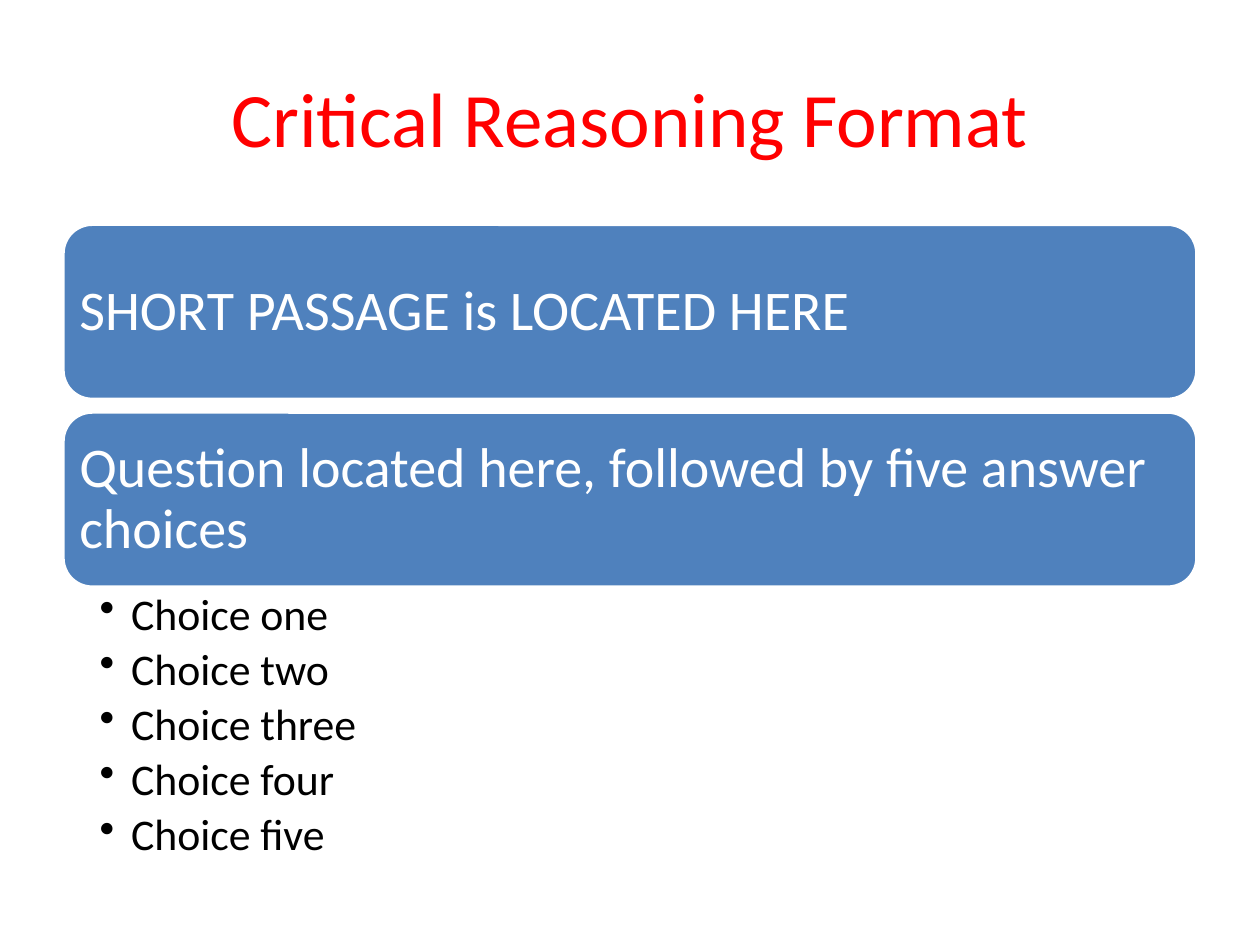
from dataclasses import dataclass

from lxml.etree import SubElement
from pptx import Presentation
from pptx.dml.color import RGBColor
from pptx.enum.shapes import MSO_SHAPE as Shape
from pptx.enum.text import MSO_ANCHOR as Anchor, PP_ALIGN as Align
from pptx.oxml.ns import qn
from pptx.util import Inches, Pt


@dataclass(frozen=True)
class Theme:
    font: str = "Calibri"
    red: RGBColor = RGBColor(0xFF, 0x00, 0x00)
    blue: RGBColor = RGBColor(0x4F, 0x81, 0xBD)
    white: RGBColor = RGBColor(0xFF, 0xFF, 0xFF)
    black: RGBColor = RGBColor(0x00, 0x00, 0x00)
    title_size: Pt = Pt(44)
    panel_size: Pt = Pt(32)
    choice_size: Pt = Pt(25)


theme = Theme()
LEFT, WIDTH = Inches(0.5), Inches(9)
PANEL_TOP, PANEL_HEIGHT, PANEL_STEP = Inches(1.78), Inches(1.39), Inches(1.49)
PANELS = [
    "SHORT PASSAGE is LOCATED HERE",
    "Question located here, followed by five answer choices",
]
CHOICES = ["Choice one", "Choice two", "Choice three", "Choice four", "Choice five"]

deck = Presentation()
deck.slide_width, deck.slide_height = Inches(10), Inches(7.5)
page = deck.slides.add_slide(deck.slide_layouts[6])


def add_text(top, height, lines, size, color, insets, anchor=Anchor.MIDDLE):
    """Add a full-width text box, one paragraph a line; insets are left, top, right, bottom."""
    box = page.shapes.add_textbox(LEFT, top, WIDTH, height)
    frame = box.text_frame
    frame.word_wrap = True
    frame.vertical_anchor = anchor
    frame.margin_left, frame.margin_top, frame.margin_right, frame.margin_bottom = map(Inches, insets)
    frame.text = "\n".join(lines)
    for paragraph in frame.paragraphs:
        paragraph.line_spacing = 0.9
        paragraph.font.name = theme.font
        paragraph.font.size = size
        paragraph.font.color.rgb = color
    return frame.paragraphs


# Title
[title] = add_text(Inches(0.3), Inches(1.25), ["Critical Reasoning Format"],
                   theme.title_size, theme.red, (0.1, 0.05, 0.1, 0.05))
title.alignment = Align.CENTER
title.line_spacing = 1.0

# Passage and question panels
for row, wording in enumerate(PANELS):
    top = PANEL_TOP + row * PANEL_STEP
    panel = page.shapes.add_shape(Shape.ROUNDED_RECTANGLE, LEFT, top, WIDTH, PANEL_HEIGHT)
    panel.shadow.inherit = False
    panel.fill.solid()
    panel.fill.fore_color.rgb = theme.blue
    panel.line.color.rgb = theme.white
    panel.line.width = Pt(2)
    add_text(top, PANEL_HEIGHT, [wording], theme.panel_size, theme.white, (0.13,) * 4)

# Answer choices
choices = add_text(Inches(4.66), Inches(2.39), CHOICES, theme.choice_size, theme.black,
                   (0.29, 0.04, 0.25, 0.04), Anchor.TOP)
for choice in choices:
    choice.level = 1
    choice.space_after = Pt(4.5)
    properties = choice._p.get_or_add_pPr()
    properties.set("marL", str(Inches(0.25)))
    properties.set("indent", str(-Inches(0.25)))
    bullet = SubElement(properties, qn("a:buChar"), char="•")
    properties.find(qn("a:defRPr")).addprevious(bullet)

deck.save("out.pptx")
